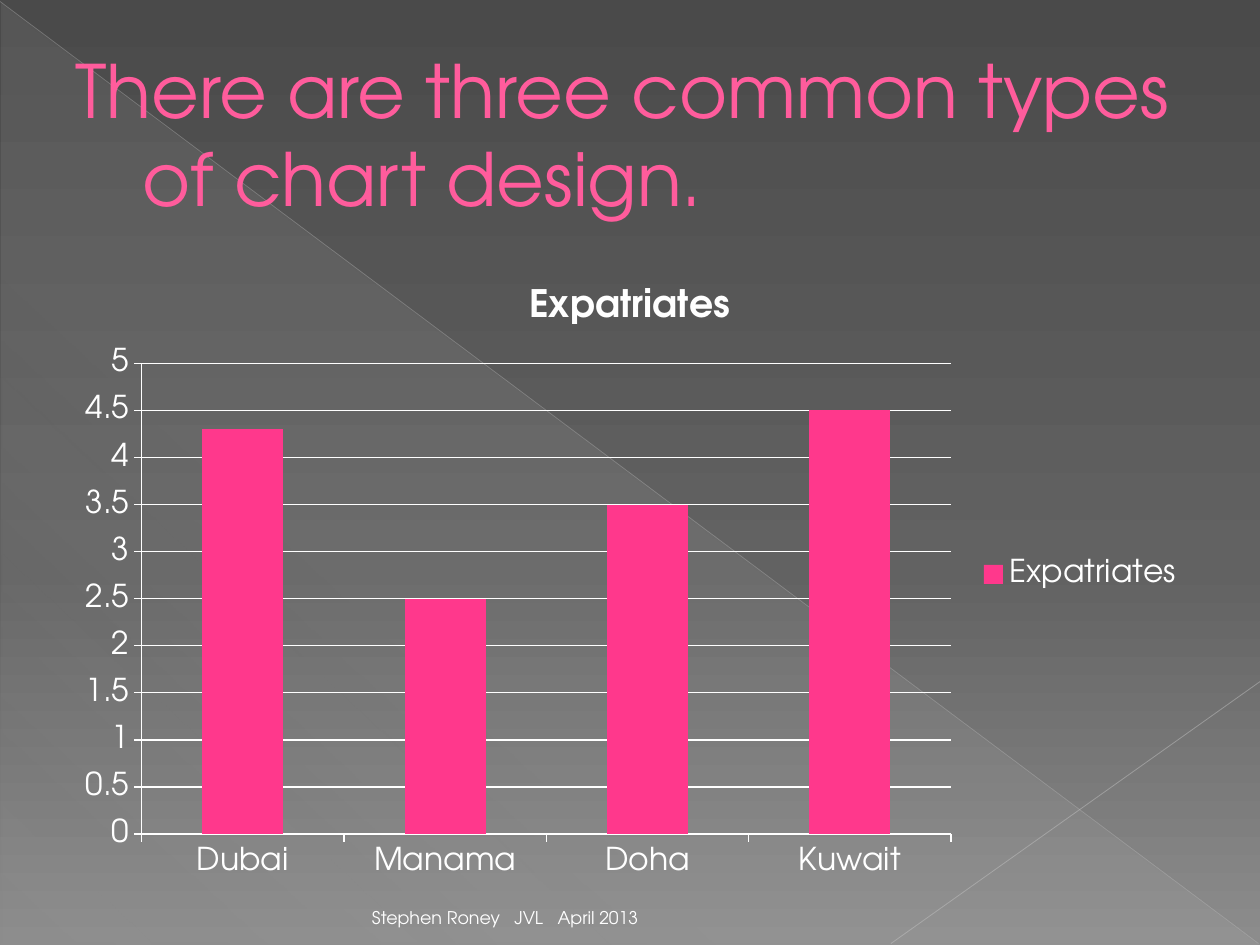
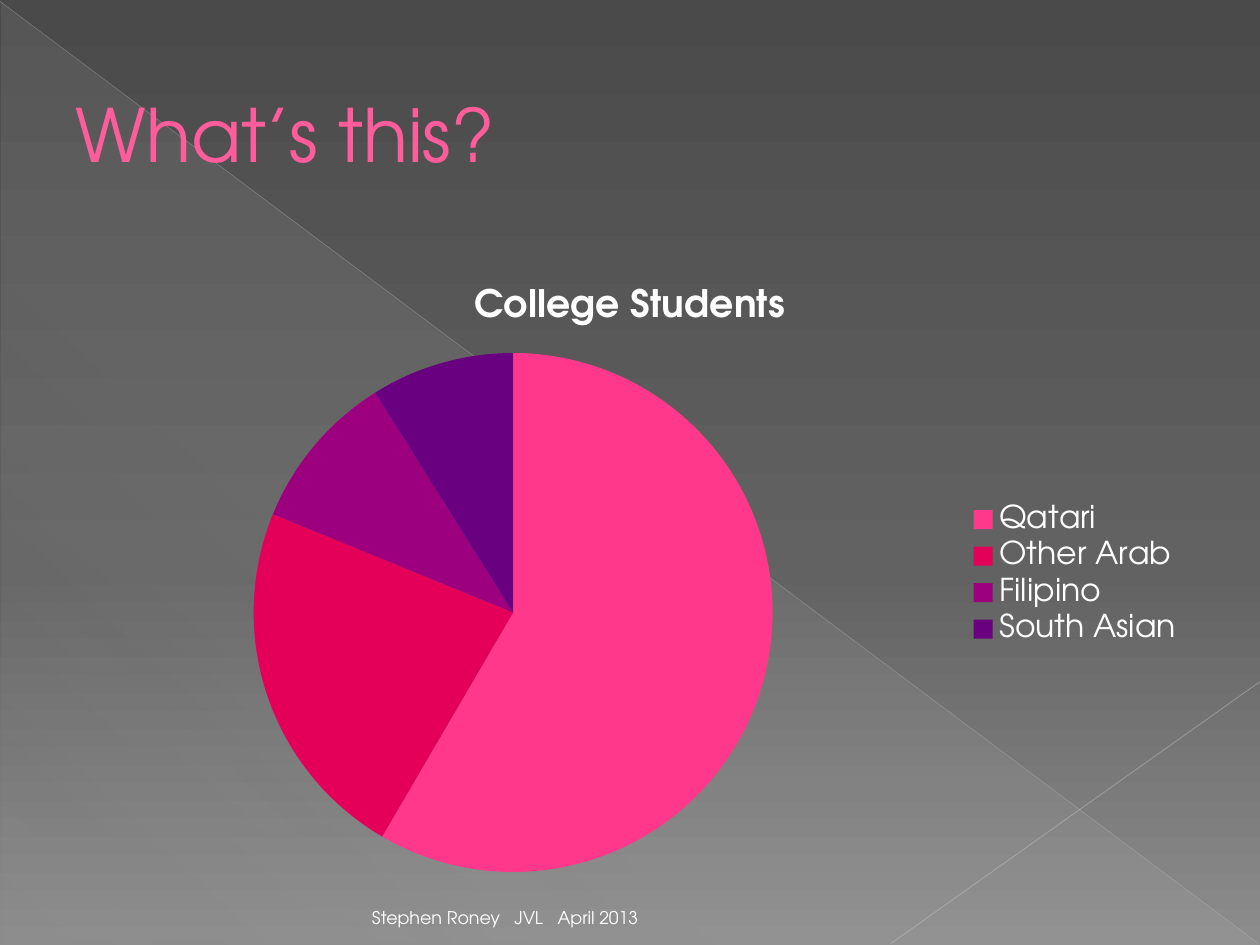
"""Build two slides on chart design, a column chart and a pie chart, in one shared dark theme."""
import lxml.etree
import pptx
import pptx.chart.data
import pptx.dml.color
import pptx.enum.chart
import pptx.enum.shapes
import pptx.enum.text
import pptx.oxml.ns
import pptx.util

Cm = pptx.util.Cm
Pt = pptx.util.Pt
qn = pptx.oxml.ns.qn
ChartType = pptx.enum.chart.XL_CHART_TYPE

FONT = "TeX Gyre Adventor"
WHITE, TITLE_PINK, TITLE_OUTLINE = "FFFFFF", "FF5C9C", "B12761"
SERIES_COLOURS = ["FF388C", "E40059", "9C007F", "68007F"]
FOOTER = "Stephen Roney   JVL   April 2013"

BACKGROUND_STOPS = [(0, "4A4A4A", 100), (60, "626262", 100), (100, "8C8C8C", 100)]
TRIANGLE_STOPS = [(0, "D2D2D2", 10), (70, "D2D2D2", 8), (100, "D2D2D2", 1)]
DIAGONALS = [
    ((0, 0.03, 25.37, 19.02), "BFBFBF", 0.39, 35),
    ((25.4, 13.74, 17.96, 19.02), "C6C6C6", 0.47, 45),
]

TRIANGLE_BOX = (0.03, 0.05, 25.37, 19)
TITLE_BOX = (1.27, 0.74, 22.86, 3.89)
CHART_BOX = (1.27, 5.23, 22.86, 12.7)
FOOTER_BOX = (1.27, 18, 11.84, 0.84)
TITLE_INDENT = 1.35

SLIDES = [
    {
        "title": "There are three common types of chart design.",
        "type": ChartType.COLUMN_CLUSTERED,
        "series": "Expatriates",
        "values": {"Dubai": 4.3, "Manama": 2.5, "Doha": 3.5, "Kuwait": 4.5},
    },
    {
        "title": "What’s this?",
        "type": ChartType.PIE,
        "series": "College Students",
        "values": {"Qatari": 59, "Other Arab": 23, "Filipino": 10, "South Asian": 9},
    },
]


def rgb(colour):
    return pptx.dml.color.RGBColor.from_string(colour)


def lengths(values):
    return [Cm(value) for value in values]


def style_font(font, size, colour, bold=False):
    font.name, font.size, font.bold = FONT, Pt(size), bold
    font.color.rgb = rgb(colour)


def add_alpha(colour_element, percent):
    alpha = lxml.etree.SubElement(colour_element, qn("a:alpha"))
    alpha.set("val", str(percent * 1000))


def set_gradient(fill, element, stops, angle):
    fill.solid()
    solid = next(element.iter(qn("a:solidFill")))
    gradient = lxml.etree.Element(qn("a:gradFill"), rotWithShape="1")
    stop_list = lxml.etree.SubElement(gradient, qn("a:gsLst"))
    for position, colour, opacity in stops:
        stop = lxml.etree.SubElement(stop_list, qn("a:gs"), pos=str(position * 1000))
        add_alpha(lxml.etree.SubElement(stop, qn("a:srgbClr"), val=colour), opacity)
    lxml.etree.SubElement(gradient, qn("a:lin"), ang=str(angle * 60000), scaled="0")
    solid.getparent().replace(solid, gradient)


def add_backdrop(slide):
    set_gradient(slide.background.fill, slide.element, BACKGROUND_STOPS, 90)
    triangle = slide.shapes.add_shape(
        pptx.enum.shapes.MSO_SHAPE.RIGHT_TRIANGLE, *lengths(TRIANGLE_BOX))
    set_gradient(triangle.fill, triangle.element, TRIANGLE_STOPS, 133)
    triangle.line.fill.background()
    triangle.shadow.inherit = False
    for ends, colour, width, opacity in DIAGONALS:
        diagonal = slide.shapes.add_connector(
            pptx.enum.shapes.MSO_CONNECTOR.STRAIGHT, *lengths(ends))
        diagonal.line.color.rgb = rgb(colour)
        diagonal.line.width = Pt(width)
        add_alpha(next(diagonal.element.iter(qn("a:srgbClr"))), opacity)
        lxml.etree.SubElement(diagonal.element.spPr, qn("a:effectLst"))


def add_title(slide, text):
    title = slide.shapes.title
    title.left, title.top, title.width, title.height = lengths(TITLE_BOX)
    frame = title.text_frame
    frame.text = text
    frame.word_wrap = True
    frame.auto_size = pptx.enum.text.MSO_AUTO_SIZE.NONE
    frame.vertical_anchor = pptx.enum.text.MSO_ANCHOR.MIDDLE
    paragraph = frame.paragraphs[0]
    paragraph.alignment = pptx.enum.text.PP_ALIGN.LEFT
    properties = paragraph._p.get_or_add_pPr()
    properties.set("marL", str(Cm(TITLE_INDENT)))
    properties.set("indent", str(-Cm(TITLE_INDENT)))
    font = paragraph.runs[0].font
    style_font(font, 42, TITLE_PINK)
    outline = lxml.etree.Element(qn("a:ln"), w=str(Pt(0.5)))
    fill = lxml.etree.SubElement(outline, qn("a:solidFill"))
    lxml.etree.SubElement(fill, qn("a:srgbClr"), val=TITLE_OUTLINE)
    paragraph.runs[0]._r.get_or_add_rPr().insert(0, outline)
    slide.shapes[-1].element.addnext(title.element)


def style_line(line):
    line.color.rgb = rgb(WHITE)
    line.width = Pt(0.75)


def style_columns(chart):
    plot = chart.plots[0]
    plot.gap_width = 150
    plot.vary_by_categories = False
    fill = plot.series[0].format.fill
    fill.solid()
    fill.fore_color.rgb = rgb(SERIES_COLOURS[0])
    for axis in (chart.category_axis, chart.value_axis):
        axis.major_tick_mark = pptx.enum.chart.XL_TICK_MARK.OUTSIDE
        style_line(axis.format.line)
    axis = chart.value_axis
    axis.minimum_scale, axis.maximum_scale, axis.major_unit = 0, 5, 0.5
    axis.has_major_gridlines = True
    style_line(axis.major_gridlines.format.line)


def style_pie(chart):
    chart.plots[0].vary_by_categories = True
    for index, colour in enumerate(SERIES_COLOURS):
        fill = chart.plots[0].series[0].points[index].format.fill
        fill.solid()
        fill.fore_color.rgb = rgb(colour)


def add_chart(slide, content):
    data = pptx.chart.data.CategoryChartData()
    data.categories = list(content["values"])
    data.add_series(content["series"], list(content["values"].values()))
    chart = slide.shapes.add_chart(content["type"], *lengths(CHART_BOX), data).chart
    style_font(chart.font, 18, WHITE)
    chart.has_title = True
    chart.chart_title.include_in_layout = False
    frame = chart.chart_title.text_frame
    frame.text = content["series"]
    style_font(frame.paragraphs[0].runs[0].font, 21.6, WHITE, bold=True)
    chart.has_legend = True
    chart.legend.position = pptx.enum.chart.XL_LEGEND_POSITION.RIGHT
    chart.legend.include_in_layout = False
    if content["type"] == ChartType.PIE:
        style_pie(chart)
    else:
        style_columns(chart)


def add_footer(slide):
    frame = slide.shapes.add_textbox(*lengths(FOOTER_BOX)).text_frame
    frame.text = FOOTER
    frame.word_wrap = True
    frame.vertical_anchor = pptx.enum.text.MSO_ANCHOR.BOTTOM
    paragraph = frame.paragraphs[0]
    paragraph.alignment = pptx.enum.text.PP_ALIGN.RIGHT
    style_font(paragraph.runs[0].font, 10, WHITE)


def main():
    presentation = pptx.Presentation()
    presentation.slide_width, presentation.slide_height = Cm(25.4), Cm(19.05)
    title_only = presentation.slide_layouts.get_by_name("Title Only")
    for content in SLIDES:
        slide = presentation.slides.add_slide(title_only)
        add_backdrop(slide)
        add_title(slide, content["title"])
        add_chart(slide, content)
        add_footer(slide)
    presentation.save("out.pptx")


if __name__ == "__main__":
    main()
